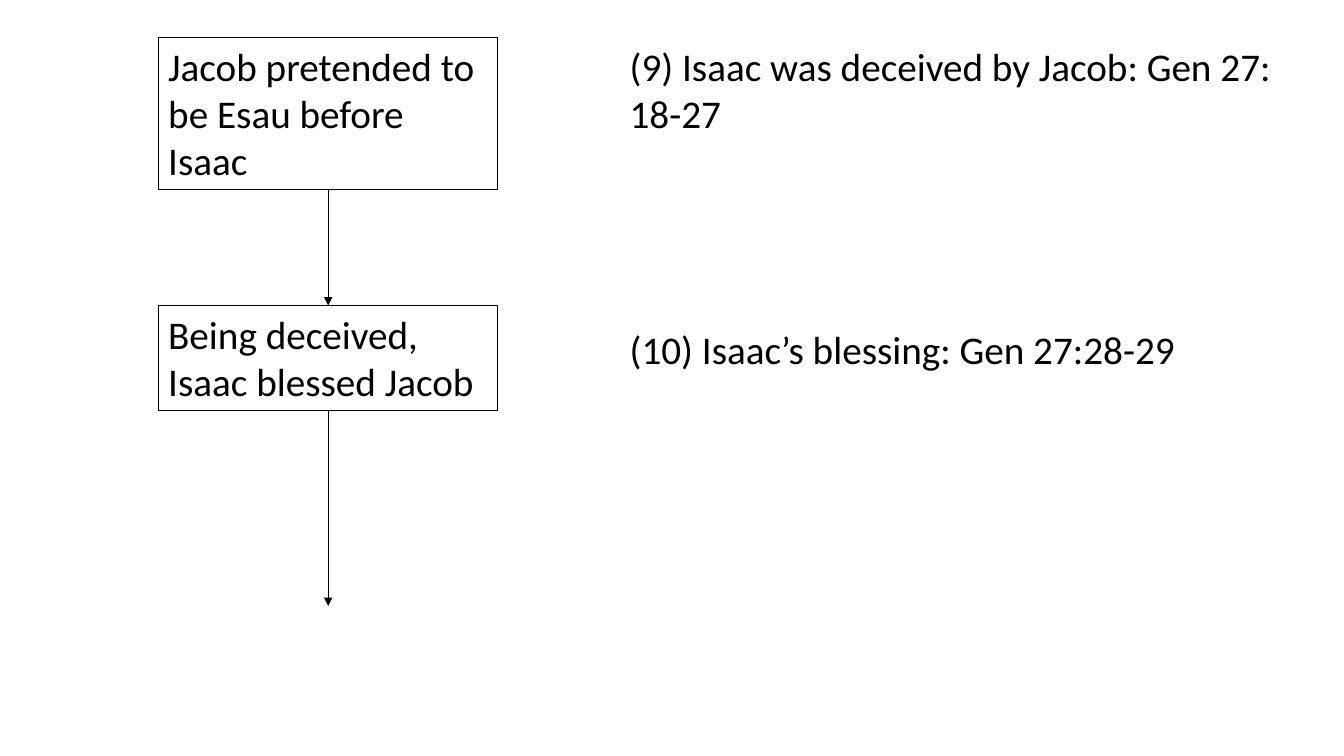
from lxml import etree
from pptx import Presentation
from pptx.dml.color import RGBColor
from pptx.enum.shapes import MSO_CONNECTOR, MSO_SHAPE
from pptx.enum.text import MSO_ANCHOR, MSO_AUTO_SIZE, PP_ALIGN
from pptx.oxml.ns import qn
from pptx.util import Cm, Pt

RECTANGLE = MSO_SHAPE.RECTANGLE
STRAIGHT = MSO_CONNECTOR.STRAIGHT
TOP = MSO_ANCHOR.TOP
LEFT = PP_ALIGN.LEFT
GROW = MSO_AUTO_SIZE.SHAPE_TO_FIT_TEXT
BLACK = RGBColor(0, 0, 0)
BOTTOM_SITE, TOP_SITE = 2, 0

EVENT_LEFT, EVENT_WIDTH = Cm(3.99), Cm(8.56)
FIRST_TOP = Cm(0.94)


def write_paragraphs(frame, texts, gap=Pt(0)):
    frame.word_wrap = True
    frame.auto_size = GROW
    frame.vertical_anchor = TOP
    for index, text in enumerate(texts):
        paragraph = frame.paragraphs[0] if index == 0 else frame.add_paragraph()
        paragraph.text = text
        paragraph.alignment = LEFT
        paragraph.font.name = "Calibri"
        paragraph.font.size = Pt(28)
        paragraph.font.color.rgb = BLACK
        if index:
            paragraph.space_before = gap


def add_event(slide, text, top, height):
    event = slide.shapes.add_shape(RECTANGLE, EVENT_LEFT, top, EVENT_WIDTH, height)
    event.shadow.inherit = False
    event.fill.background()
    event.line.color.rgb = BLACK
    event.line.width = Pt(0.75)
    write_paragraphs(event.text_frame, [text])
    return event


def add_arrow(slide, event, end_y):
    x = event.left + event.width // 2
    arrow = slide.shapes.add_connector(STRAIGHT, x, event.top + event.height, x, end_y)
    arrow.begin_connect(event, BOTTOM_SITE)
    arrow.line.color.rgb = BLACK
    arrow.line.width = Pt(0.5)
    etree.SubElement(arrow.line._get_or_add_ln(), qn("a:tailEnd"), type="triangle")
    etree.SubElement(arrow._element.spPr, qn("a:effectLst"))
    return arrow


def add_references(slide, texts):
    references = slide.shapes.add_textbox(Cm(15.62), FIRST_TOP, Cm(17.5), Cm(8.64))
    write_paragraphs(references.text_frame, texts, gap=Pt(135))


def main():
    presentation = Presentation()
    presentation.slide_width = Cm(33.87)
    presentation.slide_height = Cm(19.05)
    slide = presentation.slides.add_slide(presentation.slide_layouts[6])

    pretence = add_event(slide, "Jacob pretended to be Esau before Isaac", FIRST_TOP, Cm(3.84))
    blessing = add_event(slide, "Being deceived, Isaac blessed Jacob", Cm(7.7), Cm(2.65))
    add_arrow(slide, pretence, blessing.top).end_connect(blessing, TOP_SITE)
    add_references(slide, [
        "(9) Isaac was deceived by Jacob: Gen 27: 18-27",
        "(10) Isaac’s blessing: Gen 27:28-29",
    ])
    add_arrow(slide, blessing, Cm(15.27))
    presentation.save("out.pptx")


if __name__ == "__main__":
    main()
